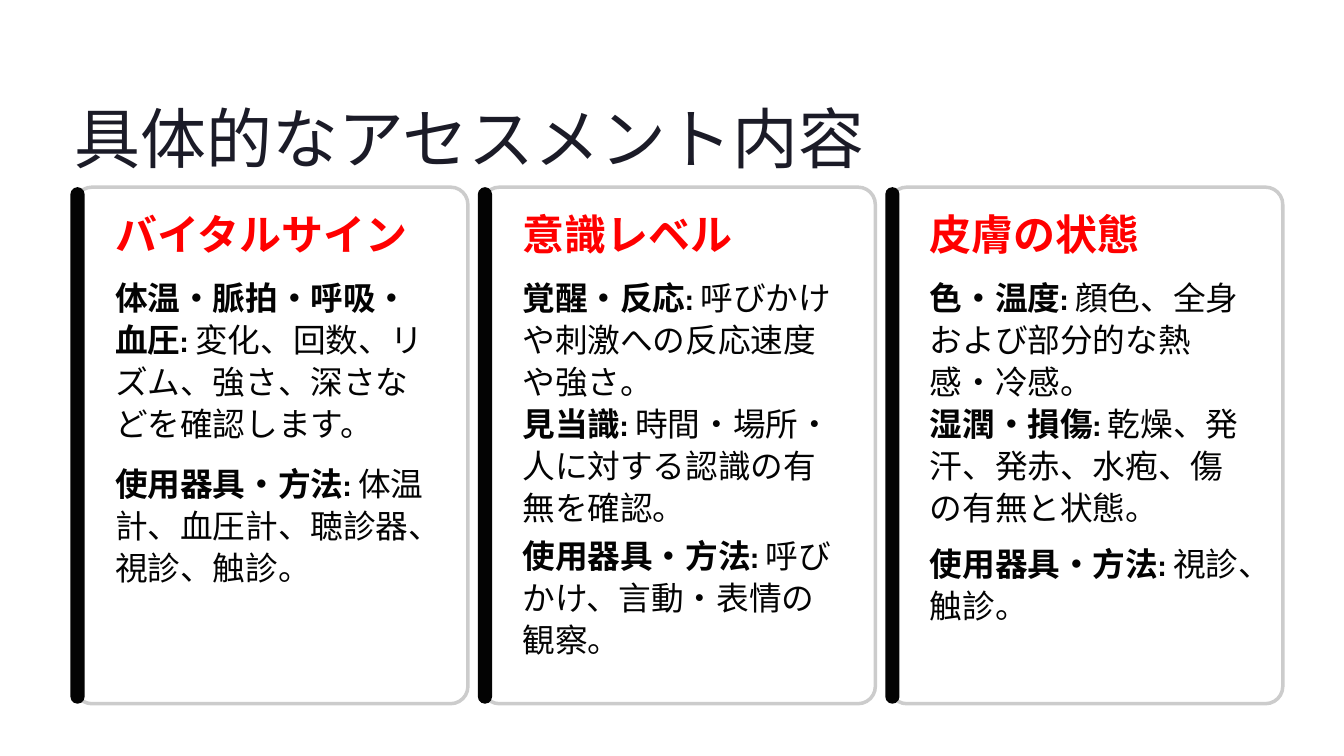
"""Build the slide on what to assess, as three cards."""
import dataclasses

import pptx
import pptx.dml.color
import pptx.enum.shapes
import pptx.enum.text
import pptx.oxml
import pptx.oxml.ns
import pptx.util
from pptx.util import Cm


@dataclasses.dataclass(frozen=True)
class Theme:
    """Colours, fonts and type sizes of the slide."""
    title_color: str = "1B1B27"
    heading_color: str = "FF0000"
    ink: str = "030303"
    card_fill: str = "FFFFFF"
    card_border: str = "CCCCCC"
    card_opacity: int = 95
    border_width: float = 3
    heading_font: str = "Inter"
    body_font: str = "Cabin"
    title_size: float = 56.5
    heading_size: float = 36
    body_size: float = 28
    title_leading: float = 71
    heading_leading: float = 35.5
    body_leading: float = 36


THEME = Theme()
FIRST_CARD_LEFT = 2.26
CARD_PITCH = 12.32
CARD_TOP = 5.66
CARD_WIDTH = 11.89
CARD_HEIGHT = 15.62
BAR_OFFSET = -0.13
BAR_WIDTH = 0.43
TEXT_OFFSET = 1.22
TEXT_WIDTH = 9.53
HEADING_TOP = 6.58
FINDINGS_TOP = 8.31
METHOD_LABEL = "使用器具・方法:"

CARDS = [
    ("バイタルサイン",
     [("体温・脈拍・呼吸・血圧: ", "変化、回数、リズム、強さ、深さなどを確認します。")],
     5.49, " 体温計、血圧計、聴診器、視診、触診。", 13.94, 4.11),
    ("意識レベル",
     [("覚醒・反応: ", "呼びかけや刺激への反応速度や強さ。"),
      ("見当識:", " 時間・場所・人に対する認識の有無を確認。")],
     6.86, " 呼びかけ、言動・表情の観察。", 16.13, 2.74),
    ("皮膚の状態",
     [("色・温度: ", "顔色、全身および部分的な熱感・冷感。"),
      ("湿潤・損傷:", " 乾燥、発汗、発赤、水疱、傷の有無と状態。")],
     6.86, " 視診、触診。", 16.36, 2.74),
]


def rgb(color):
    """Return the colour object for a hex string."""
    return pptx.dml.color.RGBColor.from_string(color)


def style_run(run, font, size, color, bold=False):
    """Set the typeface, size, colour and weight of a run."""
    run.font.name = font
    run.font.size = pptx.util.Pt(size)
    run.font.color.rgb = rgb(color)
    run.font.bold = bold


def prepare_frame(frame, wrap):
    """Strip the margins of a text frame and set its wrapping."""
    frame.margin_left = frame.margin_right = 0
    frame.margin_top = frame.margin_bottom = 0
    frame.auto_size = pptx.enum.text.MSO_AUTO_SIZE.NONE
    frame.vertical_anchor = pptx.enum.text.MSO_ANCHOR.TOP
    frame.word_wrap = wrap


def set_line(frame, text, font, size, color, leading, bold=False):
    """Fill a frame with one unwrapped line of text."""
    prepare_frame(frame, False)
    frame.text = text
    line = frame.paragraphs[0]
    line.alignment = pptx.enum.text.PP_ALIGN.LEFT
    line.line_spacing = pptx.util.Pt(leading)
    style_run(line.runs[0], font, size, color, bold)


def set_title(slide, text):
    """Move, fill and format the title placeholder."""
    title = slide.shapes.title
    title.left, title.top = Cm(FIRST_CARD_LEFT), Cm(2.84)
    title.width, title.height = Cm(24.05), Cm(2.51)
    set_line(title.text_frame, text, THEME.heading_font, THEME.title_size,
             THEME.title_color, THEME.title_leading)


def add_panel(slide, left, width, rounding, color):
    """Add a borderless rounded panel of card height."""
    panel = slide.shapes.add_shape(
        pptx.enum.shapes.MSO_SHAPE.ROUNDED_RECTANGLE,
        Cm(left), Cm(CARD_TOP), Cm(width), Cm(CARD_HEIGHT))
    panel.adjustments[0] = rounding
    panel.shadow.inherit = False
    panel.fill.solid()
    panel.fill.fore_color.rgb = rgb(color)
    panel.line.fill.background()
    return panel


def add_frame(slide, left, top, height):
    """Add a text box of the card's text width and return its frame."""
    return slide.shapes.add_textbox(
        Cm(left), Cm(top), Cm(TEXT_WIDTH), Cm(height)).text_frame


def add_entries(slide, left, top, height, entries):
    """Add wrapped paragraphs, each a bold label and its details."""
    frame = add_frame(slide, left, top, height)
    prepare_frame(frame, True)
    for index, (label, details) in enumerate(entries):
        entry = frame.add_paragraph() if index else frame.paragraphs[0]
        entry.line_spacing = pptx.util.Pt(THEME.body_leading)
        for text, bold in ((label, True), (details, False)):
            run = entry.add_run()
            run.text = text
            style_run(run, THEME.body_font, THEME.body_size, THEME.ink, bold)


def add_card(slide, left, heading, findings, findings_height,
             method, method_top, method_height):
    """Add one card with its side bar, heading, findings and method."""
    card = add_panel(slide, left, CARD_WIDTH, 0.044, THEME.card_fill)
    card.line.color.rgb = rgb(THEME.card_border)
    card.line.width = pptx.util.Pt(THEME.border_width)
    fill_color = card.fill._xPr.find(".//" + pptx.oxml.ns.qn("a:srgbClr"))
    opacity = pptx.oxml.parse_xml(
        f'<a:alpha {pptx.oxml.ns.nsdecls("a")} val="{THEME.card_opacity * 1000}"/>')
    fill_color.append(opacity)
    add_panel(slide, left + BAR_OFFSET, BAR_WIDTH, 0.5, THEME.ink)

    text_left = left + TEXT_OFFSET
    set_line(add_frame(slide, text_left, HEADING_TOP, 1.35), heading,
             THEME.heading_font, THEME.heading_size, THEME.heading_color,
             THEME.heading_leading, bold=True)
    add_entries(slide, text_left, FINDINGS_TOP, findings_height, findings)
    add_entries(slide, text_left, method_top, method_height,
                [(METHOD_LABEL, method)])


def main():
    """Build and save the slide."""
    deck = pptx.Presentation()
    deck.slide_width, deck.slide_height = Cm(40.64), Cm(22.86)
    slide = deck.slides.add_slide(deck.slide_layouts.get_by_name("Title Only"))
    set_title(slide, "具体的なアセスメント内容")
    for column, card in enumerate(CARDS):
        add_card(slide, FIRST_CARD_LEFT + column * CARD_PITCH, *card)
    deck.save("out.pptx")


if __name__ == "__main__":
    main()
